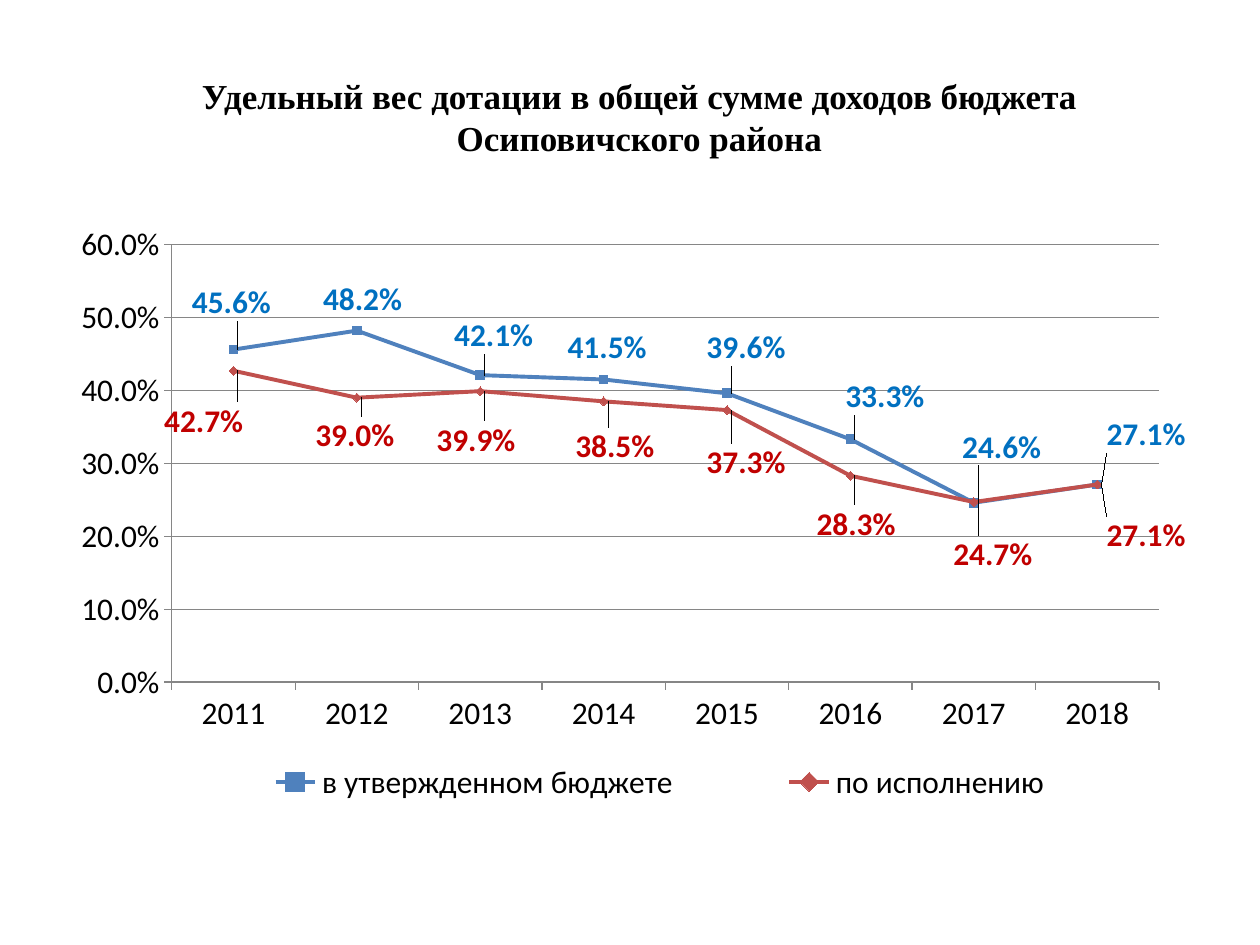
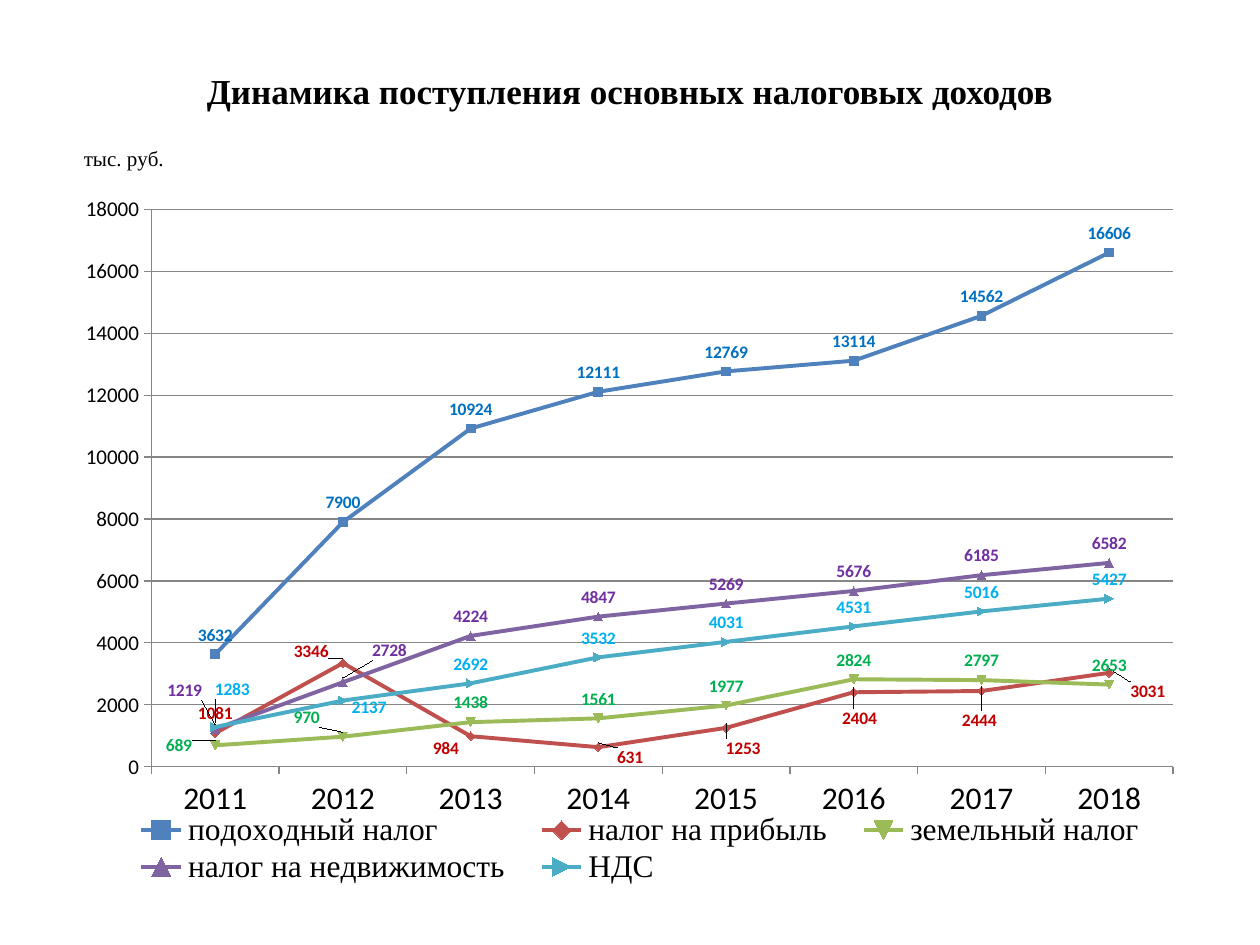
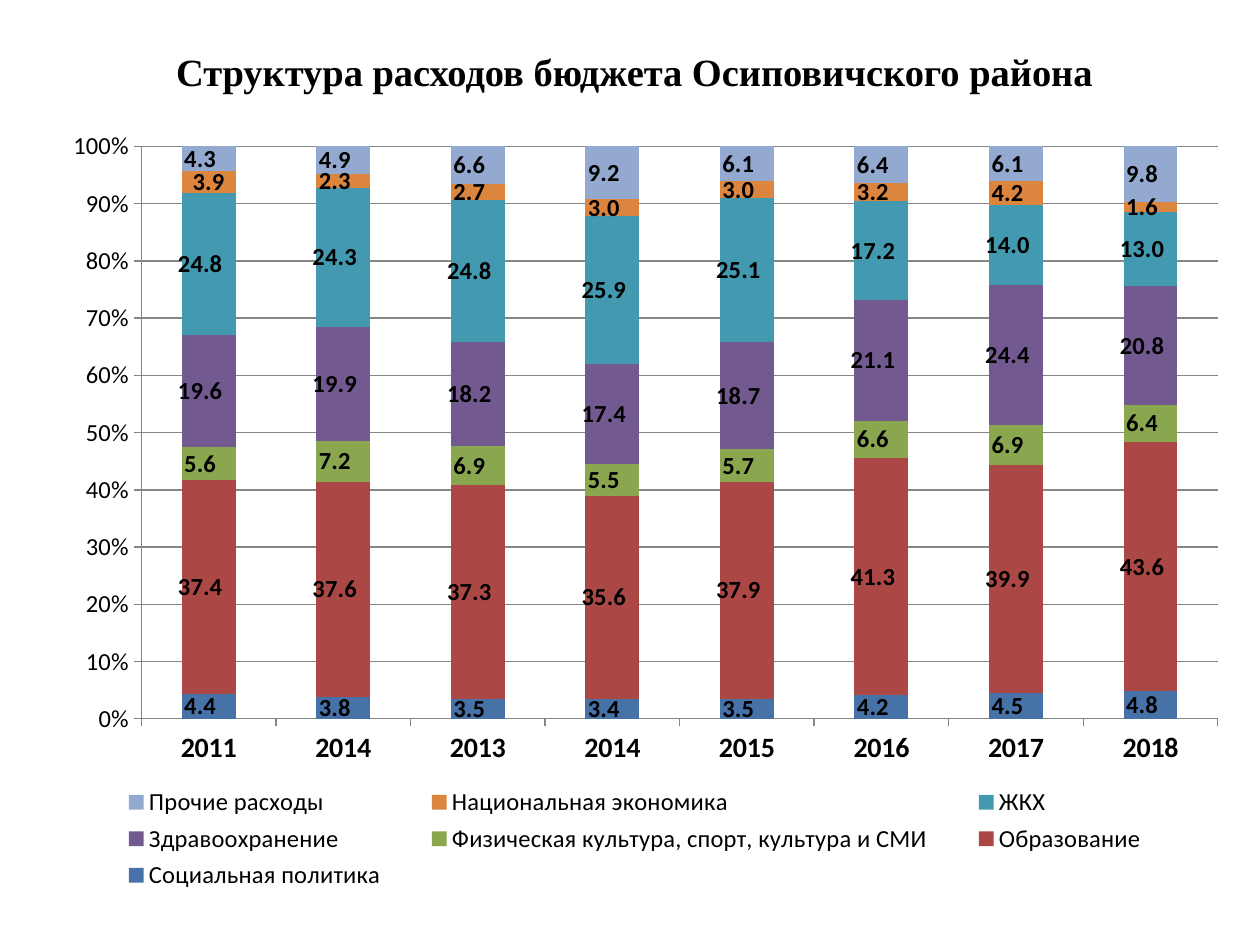
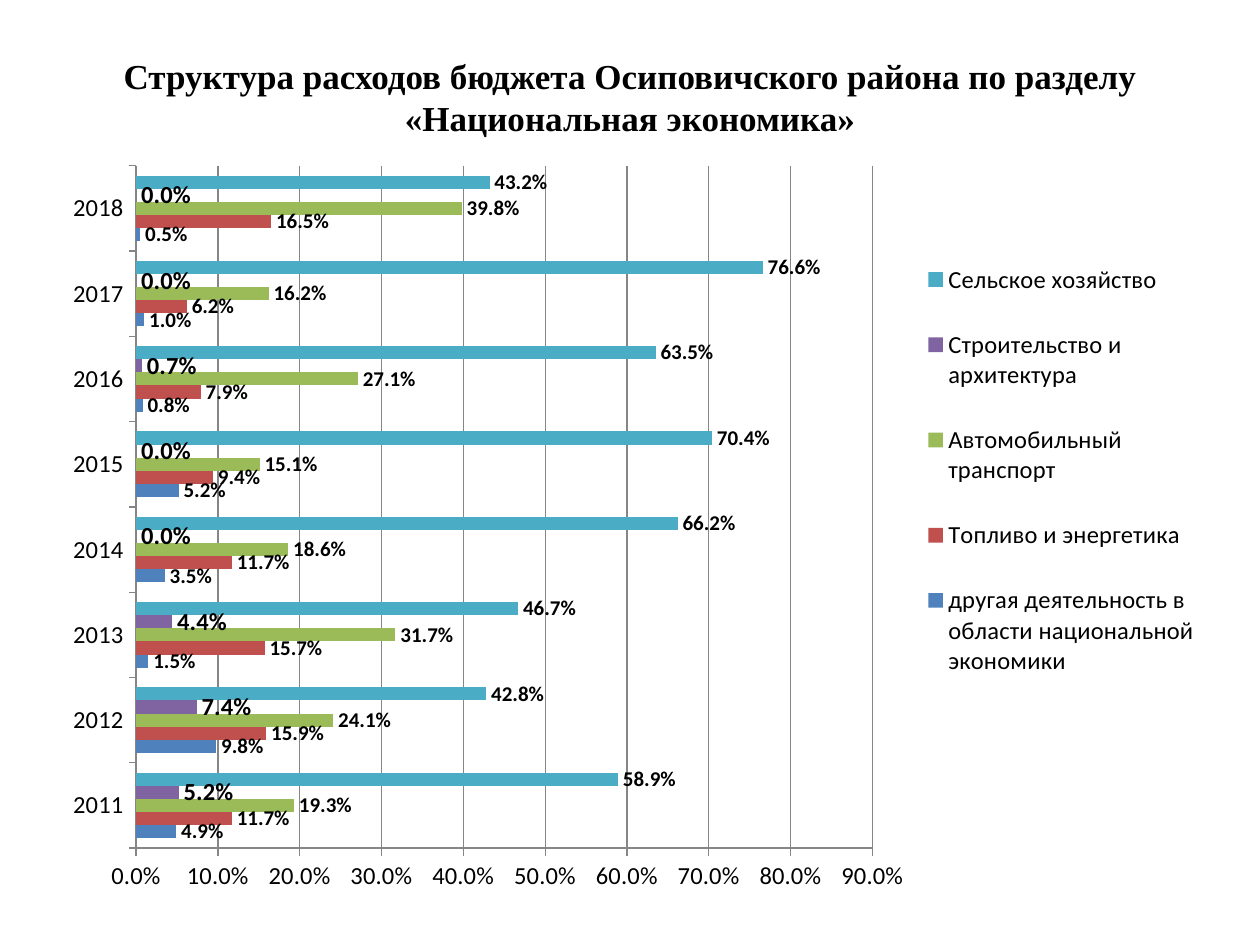
from dataclasses import dataclass, field

from pptx import Presentation
from pptx.chart.data import CategoryChartData
from pptx.dml.color import RGBColor
from pptx.enum.chart import XL_CHART_TYPE, XL_LABEL_POSITION, XL_LEGEND_POSITION, XL_TICK_MARK
from pptx.enum.text import MSO_ANCHOR, MSO_AUTO_SIZE, PP_ALIGN
from pptx.oxml import parse_xml
from pptx.oxml.ns import nsdecls, qn
from pptx.util import Pt

LINE = XL_CHART_TYPE.LINE_MARKERS
STACKED = XL_CHART_TYPE.COLUMN_STACKED_100
BARS = XL_CHART_TYPE.BAR_CLUSTERED
ABOVE = XL_LABEL_POSITION.ABOVE
CENTER = XL_LABEL_POSITION.CENTER
OUTSIDE = XL_LABEL_POSITION.OUTSIDE_END
BESIDE = XL_LABEL_POSITION.RIGHT
LEGEND_RIGHT = XL_LEGEND_POSITION.RIGHT
LEGEND_BOTTOM = XL_LEGEND_POSITION.BOTTOM
TICK_OUT = XL_TICK_MARK.OUTSIDE
MIDDLE = MSO_ANCHOR.MIDDLE
BOTTOM = MSO_ANCHOR.BOTTOM

EMU_PER_PX = 9144  # 100 px to the inch
TITLE_ONLY = 5
YEARS = [str(year) for year in range(2011, 2019)]


@dataclass(frozen=True)
class Theme:
    title_font: str = "Times New Roman"
    chart_font: str = "Calibri"
    text: str = "000000"
    grid: str = "868686"
    blue: str = "4F81BD"
    red: str = "C0504D"
    green: str = "9BBB59"
    purple: str = "8064A2"
    teal: str = "4BACC6"
    stack: tuple = ("4672A8", "AB4744", "8AA64F", "725990", "4299B0", "DC853E", "93A9CF")
    label_blue: str = "0070C0"
    label_red: str = "C00000"
    label_green: str = "00B050"
    label_purple: str = "7030A0"
    label_sky: str = "00B0F0"
    title_size: int = 20
    wide_title_size: int = 22
    chart_size: int = 18
    category_size: int = 16
    small_size: int = 14
    note_size: int = 12
    point_size: int = 10


THEME = Theme()


@dataclass
class Series:
    """One data series; shifts move single labels by thousandths of the chart."""
    name: str
    values: tuple
    color: str
    label_size: int
    label_color: str = THEME.text
    shifts: dict = field(default_factory=dict)


def px(length):
    return length * EMU_PER_PX


def style_font(font, size, color=THEME.text, bold=False, name=THEME.chart_font):
    font.name = name
    font.size = Pt(size)
    font.bold = bold
    font.color.rgb = RGBColor.from_string(color)


def set_layout(parent, index, x, y, size=None, inner=False, shift=False):
    """Give a chart part a manual layout, in thousandths of the chart."""
    parts = ['<c:layoutTarget val="inner"/>'] if inner else []
    if not shift:
        parts += ['<c:xMode val="edge"/>', '<c:yMode val="edge"/>']
    lengths = dict(zip("xywh", (x, y, *(size or ()))))
    parts += [f'<c:{key} val="{value / 1000}"/>' for key, value in lengths.items()]
    for old_layout in parent.findall(qn("c:layout")):
        parent.remove(old_layout)
    parent.insert(index, parse_xml(
        f'<c:layout {nsdecls("c")}><c:manualLayout>{"".join(parts)}</c:manualLayout></c:layout>'))


def add_titled_slide(presentation, text, box, size=THEME.title_size, anchor=MIDDLE):
    slide = presentation.slides.add_slide(presentation.slide_layouts[TITLE_ONLY])
    title = slide.shapes.title
    title.left, title.top, title.width, title.height = map(px, box)
    frame = title.text_frame
    frame.text = text
    frame.word_wrap = True
    frame.auto_size = MSO_AUTO_SIZE.NONE
    frame.vertical_anchor = anchor
    paragraph = frame.paragraphs[0]
    paragraph.alignment = PP_ALIGN.CENTER
    style_font(paragraph.font, size, bold=True, name=THEME.title_font)
    return slide


def style_series(chart_series, series, is_line):
    color = RGBColor.from_string(series.color)
    if is_line:
        chart_series.smooth = False
        chart_series.format.line.width = Pt(2.25)
        chart_series.format.line.color.rgb = color
        marker = chart_series.marker
        marker.size = 5
        marker.format.fill.solid()
        marker.format.fill.fore_color.rgb = color
        marker.format.line.color.rgb = color
    else:
        chart_series.invert_if_negative = False
        chart_series.format.fill.solid()
        chart_series.format.fill.fore_color.rgb = color


def style_labels(chart_series, series, position, label_format):
    labels = chart_series.data_labels
    labels.show_value = True
    labels.position = position
    style_font(labels.font, series.label_size, series.label_color, True)
    if label_format:
        labels.number_format = label_format
        labels.number_format_is_linked = False
    for index in series.shifts:
        label = chart_series.points[index].data_label
        label.position = position
        style_font(label.font, series.label_size, series.label_color, True)
    for element, index in zip(labels._element.findall(qn("c:dLbl")), sorted(series.shifts)):
        set_layout(element, 1, *series.shifts[index], shift=True)


def style_axes(chart, category_font, value_size, value_format, top, step):
    style_font(chart.category_axis.tick_labels.font, *category_font)
    value_axis = chart.value_axis
    style_font(value_axis.tick_labels.font, value_size)
    value_axis.tick_labels.number_format = value_format
    value_axis.tick_labels.number_format_is_linked = False
    value_axis.minimum_scale = 0
    value_axis.maximum_scale = top
    value_axis.major_unit = step
    value_axis.has_major_gridlines = True
    for axis in (chart.category_axis, value_axis):
        axis.major_tick_mark = TICK_OUT
    for part in (chart.category_axis, value_axis, value_axis.major_gridlines):
        part.format.line.color.rgb = RGBColor.from_string(THEME.grid)
        part.format.line.width = Pt(0.75)


def add_legend(chart, box, position, size, font_name):
    chart.has_legend = True
    legend = chart.legend
    legend.position = position
    legend.include_in_layout = False
    style_font(legend.font, size, name=font_name)
    x, y, *extent = box
    set_layout(legend._element, 1, x, y, extent)


def add_chart_title(chart, text, x, y):
    chart.has_title = True
    frame = chart.chart_title.text_frame
    frame.text = text
    style_font(frame.paragraphs[0].font, THEME.note_size, name=THEME.title_font)
    set_layout(chart.chart_title._element, 1, x, y)


def add_data_chart(slide, kind, box, all_series, plot_box, legend_box, label_position, *,
                   top, step, categories=YEARS, value_format="General", data_format="General",
                   label_format=None, category_font=(THEME.chart_size, THEME.text, False),
                   value_size=THEME.chart_size, legend_size=THEME.chart_size,
                   legend_font=THEME.chart_font, legend_position=LEGEND_RIGHT):
    data = CategoryChartData(number_format=data_format)
    data.categories = categories
    for series in all_series:
        data.add_series(series.name, series.values)
    chart = slide.shapes.add_chart(kind, *map(px, box), data).chart
    chart.has_title = False
    style_font(chart.font, THEME.chart_size)
    plot = chart.plots[0]
    plot.vary_by_categories = False
    if kind != LINE:
        plot.gap_width = 150
        plot.overlap = 100 if kind == STACKED else 0
    for chart_series, series in zip(plot.series, all_series):
        style_series(chart_series, series, kind == LINE)
        style_labels(chart_series, series, label_position, label_format)
    style_axes(chart, category_font, value_size, value_format, top, step)
    add_legend(chart, legend_box, legend_position, legend_size, legend_font)
    x, y, *extent = plot_box
    set_layout(chart._chartSpace.chart.plotArea, 0, x, y, extent, inner=True)
    return chart


def build_subsidy_slide(presentation):
    slide = add_titled_slide(
        presentation, "Удельный вес дотации в общей сумме доходов бюджета Осиповичского района",
        (50, 21, 915, 110), anchor=BOTTOM)
    approved_shifts = [(-46, -74), (-39, -50), (-32, -63), (-41, -50),
                       (-27, -72), (-13, -68), (-19, -88), (0, -79)]
    actual_shifts = [(-71, 79), (-46, 60), (-48, 77), (-34, 71),
                     (-27, 83), (-39, 76), (-27, 83), (0, 80)]
    all_series = [
        Series("в утвержденном бюджете",
               (0.456, 0.482, 0.421, 0.415, 0.396, 0.333, 0.246, 0.271),
               THEME.blue, THEME.chart_size, THEME.label_blue, dict(enumerate(approved_shifts))),
        Series("по исполнению",
               (0.427, 0.39, 0.399, 0.385, 0.373, 0.283, 0.247, 0.271),
               THEME.red, THEME.chart_size, THEME.label_red, dict(enumerate(actual_shifts))),
    ]
    add_data_chart(slide, LINE, (59, 170, 882, 504), all_series,
                   (88, 48, 891, 689), (86, 844, 885, 100), BESIDE,
                   top=0.6, step=0.1, value_format="0.0%", data_format="0.0%")


def build_tax_slide(presentation):
    slide = add_titled_slide(presentation, "Динамика поступления основных налоговых доходов",
                             (50, 44, 900, 55))
    size = THEME.point_size
    all_series = [
        Series("подоходный налог", (3632, 7900, 10924, 12111, 12769, 13114, 14562, 16606),
               THEME.blue, size, THEME.label_blue),
        Series("налог на прибыль", (1081, 3346, 984, 631, 1253, 2404, 2444, 3031),
               THEME.red, size, THEME.label_red,
               {1: (-28, 10), 2: (-22, 41), 3: (28, 39), 4: (15, 52),
                5: (5, 59), 6: (-2, 64), 7: (34, 50)}),
        Series("земельный налог", (689, 970, 1438, 1561, 1977, 2824, 2797, 2653),
               THEME.green, size, THEME.label_green, {0: (-32, 26), 1: (-32, 0)}),
        Series("налог на недвижимость", (1219, 2728, 4224, 4847, 5269, 5676, 6185, 6582),
               THEME.purple, size, THEME.label_purple, {0: (-27, -25), 1: (41, -16)}),
        Series("НДС", (1283, 2137, 2692, 3532, 4031, 4531, 5016, 5427),
               THEME.teal, size, THEME.label_sky, {0: (15, -24), 1: (23, 35)}),
    ]
    chart = add_data_chart(slide, LINE, (50, 99, 900, 606), all_series,
                           (78, 111, 901, 730), (46, 899, 926, 98), ABOVE,
                           top=18000, step=2000, value_size=THEME.note_size,
                           legend_font=THEME.title_font, legend_position=LEGEND_BOTTOM)
    add_chart_title(chart, "тыс. руб.", 15, 22)


def build_spending_slide(presentation):
    slide = add_titled_slide(presentation, "Структура расходов бюджета Осиповичского района",
                             (50, 21, 907, 71), THEME.wide_title_size)
    rows = [
        ("Социальная политика", (4.4, 3.8, 3.5, 3.4, 3.5, 4.2, 4.5, 4.8)),
        ("Образование", (37.4, 37.6, 37.3, 35.6, 37.9, 41.3, 39.9, 43.6)),
        ("Физическая культура, спорт, культура и СМИ",
         (5.6, 7.2, 6.9, 5.5, 5.7, 6.6, 6.9, 6.4)),
        ("Здравоохранение", (19.6, 19.9, 18.2, 17.4, 18.7, 21.1, 24.4, 20.8)),
        ("ЖКХ", (24.8, 24.3, 24.8, 25.9, 25.1, 17.2, 14, 13)),
        ("Национальная экономика", (3.9, 2.3, 2.7, 3, 3, 3.2, 4.2, 1.6)),
        ("Прочие расходы", (4.3, 4.9, 6.6, 9.2, 6.1, 6.4, 6.1, 9.8)),
    ]
    all_series = [Series(name, values, color, THEME.small_size)
                  for (name, values), color in zip(rows, THEME.stack)]
    all_series[5].shifts = {0: (7, 0)}
    categories = ["2011", "2014", *YEARS[2:]]
    add_data_chart(slide, STACKED, (20, 99, 961, 614), all_series,
                   (96, 28, 889, 740), (50, 848, 907, 150), CENTER,
                   top=1, step=0.1, categories=categories, value_format="0%",
                   data_format="0.0", label_format="0.0_р_.",
                   category_font=(THEME.category_size, THEME.text, True),
                   value_size=THEME.small_size, legend_size=THEME.small_size)


def build_economy_slide(presentation):
    slide = add_titled_slide(
        presentation,
        "Структура расходов бюджета Осиповичского района по разделу «Национальная экономика»",
        (50, 30, 900, 93))
    note, small = THEME.note_size, THEME.small_size
    all_series = [
        Series("другая деятельность в области национальной экономики",
               (0.049, 0.098, 0.015, 0.035, 0.052, 0.008, 0.01, 0.005), THEME.blue, note),
        Series("Топливо и энергетика",
               (0.117, 0.159, 0.157, 0.117, 0.094, 0.079, 0.062, 0.165), THEME.red, note),
        Series("Автомобильный транспорт",
               (0.193, 0.241, 0.317, 0.186, 0.151, 0.271, 0.162, 0.398), THEME.green, note),
        Series("Строительство и архитектура",
               (0.052, 0.074, 0.044, 0, 0, 0.007, 0, 0), THEME.purple, small),
        Series("Сельское хозяйство",
               (0.589, 0.428, 0.467, 0.662, 0.704, 0.635, 0.766, 0.432), THEME.teal, note),
    ]
    add_data_chart(slide, BARS, (43, 131, 916, 583), all_series,
                   (71, 0, 638, 930), (746, 87, 253, 656), OUTSIDE,
                   top=0.9, step=0.1, value_format="0.0%", data_format="0.0%",
                   category_font=(small, THEME.text, False),
                   value_size=small, legend_size=small)


def main():
    presentation = Presentation()
    presentation.slide_width, presentation.slide_height = px(1000), px(750)
    build_subsidy_slide(presentation)
    build_tax_slide(presentation)
    build_spending_slide(presentation)
    build_economy_slide(presentation)
    presentation.save("out.pptx")


if __name__ == "__main__":
    main()
